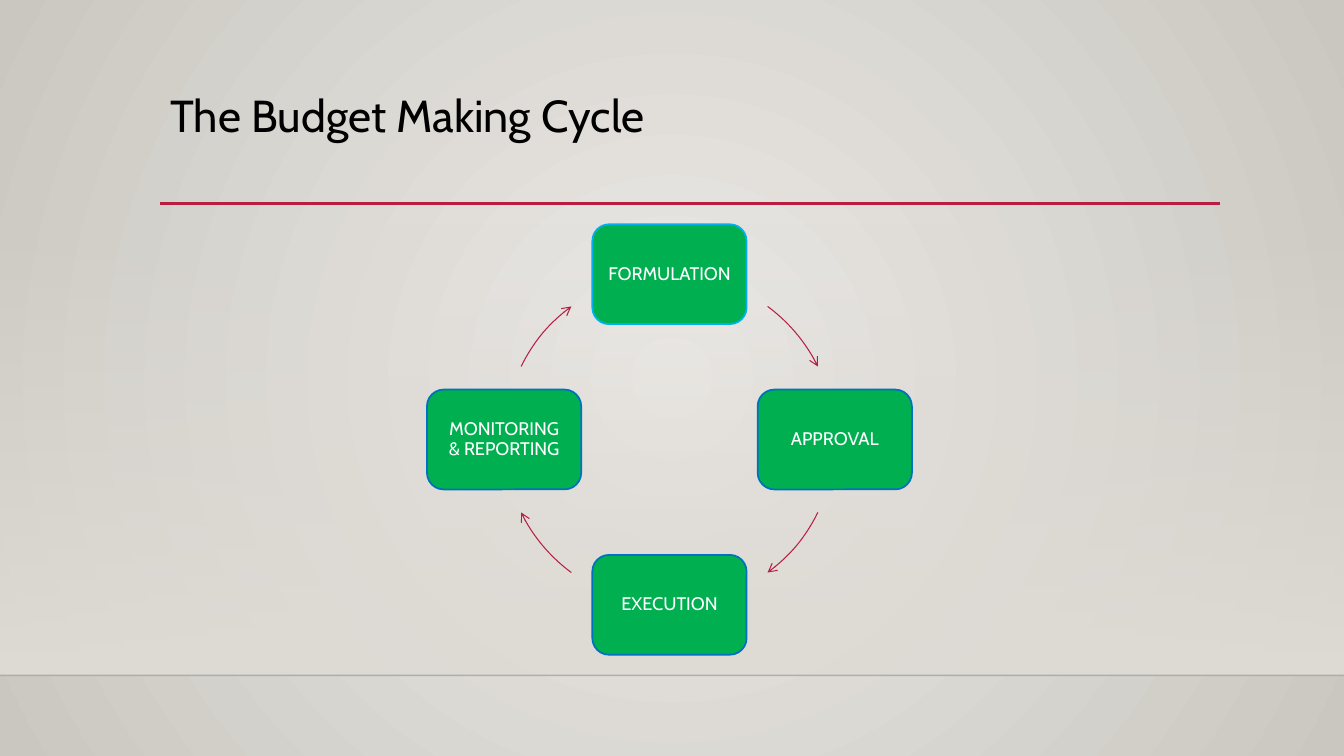
from lxml import etree
from pptx import Presentation
from pptx.dml.color import RGBColor
from pptx.enum.shapes import MSO_CONNECTOR, MSO_SHAPE
from pptx.enum.text import MSO_ANCHOR, PP_ALIGN
from pptx.oxml import parse_xml
from pptx.oxml.ns import nsdecls, qn
from pptx.util import Inches, Pt

STRAIGHT = MSO_CONNECTOR.STRAIGHT
RECTANGLE, ROUNDED, ARC = MSO_SHAPE.RECTANGLE, MSO_SHAPE.ROUNDED_RECTANGLE, MSO_SHAPE.ARC
TOP, MIDDLE = MSO_ANCHOR.TOP, MSO_ANCHOR.MIDDLE
LEFT, CENTER = PP_ALIGN.LEFT, PP_ALIGN.CENTER

TITLE = "The Budget Making Cycle"
# stage, direction from the centre, outline colour
STAGES = [
    ("FORMULATION", (0, -1), "current"),
    ("APPROVAL", (1, 0), "outline"),
    ("EXECUTION", (0, 1), "outline"),
    ("MONITORING & REPORTING", (-1, 0), "outline"),
]
THEME = {
    "font": "Cabin", "title_size": 32, "stage_size": 13,
    "title": "000000", "stage_text": "FFFFFF", "stage": "00B050",
    "current": "00B0F0", "outline": "0070C0", "accent": "B71E42",
    "floor": "000001", "glow": "ECEAE7", "edge": "CAC7C1", "band": "DFDBD5",
}

SLIDE_W, SLIDE_H = 13.33, 7.5
FLOOR_Y = 6.7
BAND_Y = 2.21
RULE_LEFT, RULE_RIGHT, RULE_Y = 1.59, 12.1, 2.02
CENTER_X, CENTER_Y, RADIUS = 6.64, 4.36, 1.64
STAGE_W, STAGE_H = 1.53, 0.99
# arrow ends, in degrees from the horizontal axis
NEAR, FAR = 26.2, 53.6
ARROWS = [(360 - FAR, 360 - NEAR), (NEAR, FAR),
          (180 - FAR, 180 - NEAR), (180 + NEAR, 180 + FAR)]


def color(name):
    return RGBColor.from_string(THEME[name])


def inches(*lengths):
    return [Inches(length) for length in lengths]


def gradient(stops, direction):
    """Gradient fill element from (position, colour name, alpha) stops, in percent."""
    stop_xml = "".join(
        f'<a:gs pos="{position * 1000}"><a:srgbClr val="{THEME[name]}">'
        f'<a:alpha val="{alpha * 1000}"/></a:srgbClr></a:gs>'
        for position, name, alpha in stops)
    return parse_xml(f'<a:gradFill {nsdecls("a")} rotWithShape="1">'
                     f'<a:gsLst>{stop_xml}</a:gsLst>{direction}</a:gradFill>')


def replace_fill(parent, fill):
    parent.replace(parent.find(qn("a:solidFill")), fill)


def write(shape, text, size, name, align, anchor, inset):
    frame = shape.text_frame
    margins = {"margin_left": inset[0], "margin_right": inset[0],
               "margin_top": inset[1], "margin_bottom": inset[1]}
    for side, length in margins.items():
        setattr(frame, side, Inches(length))
    frame.word_wrap = True
    frame.vertical_anchor = anchor
    paragraph = frame.paragraphs[0]
    paragraph.text = text
    paragraph.alignment = align
    paragraph.line_spacing = 0.9
    font = paragraph.runs[0].font
    for key, value in {"name": THEME["font"], "size": Pt(THEME[size])}.items():
        setattr(font, key, value)
    font.color.rgb = color(name)


def set_line(shape, name, width):
    shape.line.color.rgb = color(name)
    shape.line.width = Pt(width)


def add_rule(slide, left, right, y, name, width):
    rule = slide.shapes.add_connector(STRAIGHT, *inches(left, y, right, y))
    set_line(rule, name, width)
    etree.SubElement(rule._element.spPr, qn("a:effectLst"))
    return rule


def add_backdrop(slide):
    fill = slide.background.fill
    fill.solid()
    fill.fore_color.rgb = color("edge")
    circle = ('<a:path path="circle"><a:fillToRect l="50000" t="50000" '
              'r="50000" b="50000"/></a:path>')
    replace_fill(slide._element.cSld.find(f'{qn("p:bg")}/{qn("p:bgPr")}'),
                 gradient([(0, "glow", 100), (100, "edge", 100)], circle))

    band = slide.shapes.add_shape(
        RECTANGLE, *inches(0, BAND_Y, SLIDE_W, FLOOR_Y - BAND_Y))
    band.shadow.inherit = False
    band.line.fill.background()
    band.fill.solid()
    replace_fill(band._element.spPr,
                 gradient([(0, "band", 0), (100, "band", 100)],
                          '<a:lin ang="5400000" scaled="0"/>'))

    floor = add_rule(slide, 0, SLIDE_W, FLOOR_Y, "floor", 1)
    floor_color = floor.line._ln.find(f'{qn("a:solidFill")}/{qn("a:srgbClr")}')
    etree.SubElement(floor_color, qn("a:alpha"), val="20000")


def add_stage(slide, label, direction, outline):
    x = CENTER_X + RADIUS * direction[0] - STAGE_W / 2
    y = CENTER_Y + RADIUS * direction[1] - STAGE_H / 2
    stage = slide.shapes.add_shape(ROUNDED, *inches(x, y, STAGE_W, STAGE_H))
    stage.shadow.inherit = False
    stage.fill.solid()
    stage.fill.fore_color.rgb = color("stage")
    set_line(stage, outline, 1.25)
    write(stage, label, "stage_size", "stage_text", CENTER, MIDDLE, (0.1, 0.1))


def add_arrow(slide, start, end):
    """Clockwise arc on the cycle's circle, with angles in degrees."""
    arrow = slide.shapes.add_shape(
        ARC, *inches(CENTER_X - RADIUS, CENTER_Y - RADIUS, 2 * RADIUS, 2 * RADIUS))
    arrow.shadow.inherit = False
    arrow.fill.background()
    # adjustments count in units of 100000, angles in 60000ths of a degree
    for index, angle in enumerate((start, end)):
        arrow.adjustments[index] = angle * 0.6
    set_line(arrow, "accent", 0.75)
    etree.SubElement(arrow.line._ln, qn("a:tailEnd"), type="arrow")


def main():
    deck = Presentation()
    deck.slide_width, deck.slide_height = inches(SLIDE_W, SLIDE_H)
    slide = deck.slides.add_slide(deck.slide_layouts[6])
    add_backdrop(slide)
    add_rule(slide, RULE_LEFT, RULE_RIGHT, RULE_Y, "accent", 2.5)
    title = slide.shapes.add_textbox(*inches(RULE_LEFT, 0.88, 10.5, 1.15))
    write(title, TITLE, "title_size", "title", LEFT, TOP, (0.1, 0.05))
    for stage, arrow in zip(STAGES, ARROWS):
        add_stage(slide, *stage)
        add_arrow(slide, *arrow)
    deck.save("out.pptx")


if __name__ == "__main__":
    main()
